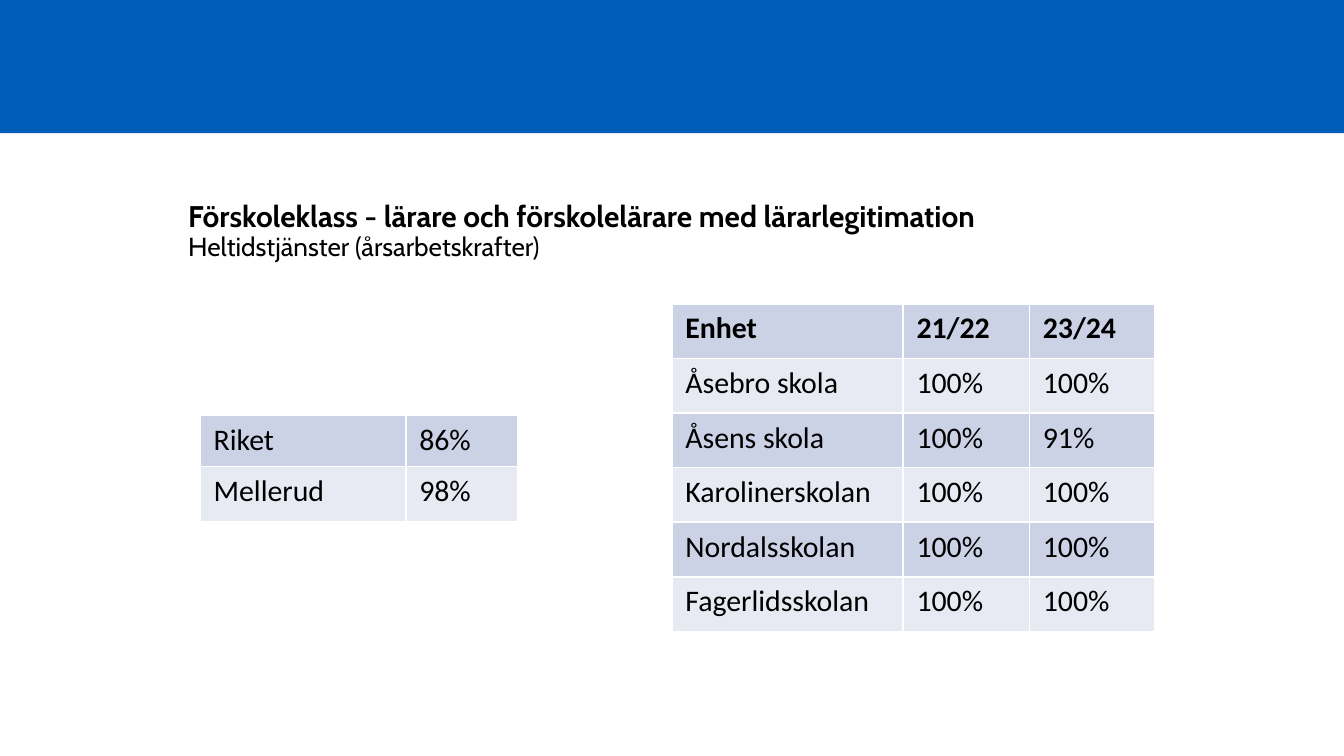
"""Build a slide on certified preschool-class teachers with two share tables."""
from lxml.etree import SubElement
from pptx import Presentation
from pptx.dml.color import RGBColor
from pptx.enum.shapes import MSO_SHAPE
from pptx.enum.text import MSO_ANCHOR, MSO_AUTO_SIZE, PP_ALIGN
from pptx.oxml.ns import qn
from pptx.util import Inches, Pt

TITLE = [
    ("Förskoleklass - lärare och förskolelärare med lärarlegitimation", 16, True),
    ("Heltidstjänster (årsarbetskrafter)", 14, False),
]
TABLES = [
    {
        "rows": [("Riket", "86%"), ("Mellerud", "98%")],
        "position": (1.49, 3.09),
        "widths": [1.53, 0.83],
        "heights": [0.38, 0.41],
        "header": False,
    },
    {
        "rows": [
            ("Enhet", "21/22", "23/24"),
            ("Åsebro skola", "100%", "100%"),
            ("Åsens skola", "100%", "91%"),
            ("Karolinerskolan", "100%", "100%"),
            ("Nordalsskolan", "100%", "100%"),
            ("Fagerlidsskolan", "100%", "100%"),
        ],
        "position": (5, 2.26),
        "widths": [1.72, 0.94, 0.93],
        "heights": [2.44 / 6] * 6,
        "header": True,
    },
]
BAND_FILLS = ("CCD2E6", "E7EAF3")


def set_fill(item, color):
    item.fill.solid()
    item.fill.fore_color.rgb = RGBColor.from_string(color)


def add_text(paragraph, text, size=16, font="Calibri", color="000000", bold=False):
    run = paragraph.add_run()
    run.text = text
    run.font.size = Pt(size)
    run.font.name = font
    run.font.bold = bold
    run.font.color.rgb = RGBColor.from_string(color)


def set_borders(cell, color="FFFFFF", width=1):
    properties = cell._tc.get_or_add_tcPr()
    for index, side in enumerate(("lnL", "lnR", "lnT", "lnB")):
        line = SubElement(properties, qn(f"a:{side}"), w=str(Pt(width)))
        properties.insert(index, line)
        fill = SubElement(line, qn("a:solidFill"))
        SubElement(fill, qn("a:srgbClr"), val=color)


def add_share_table(slide, rows, position, widths, heights, header):
    size = (sum(widths), sum(heights))
    frame = slide.shapes.add_table(
        len(rows), len(widths), *map(Inches, position + size))
    table = frame.table
    table.first_row = header
    table.horz_banding = False
    for column, width in zip(table.columns, widths):
        column.width = Inches(width)
    for row_index, (row, height) in enumerate(zip(table.rows, heights)):
        row.height = Inches(height)
        for cell, text in zip(row.cells, rows[row_index]):
            set_fill(cell, BAND_FILLS[row_index % 2])
            set_borders(cell)
            add_text(cell.text_frame.paragraphs[0], text,
                     bold=header and row_index == 0)


def add_title(slide):
    title = slide.shapes.title
    title.left, title.top, title.width, title.height = map(
        Inches, (1.3, 1.46, 8.9, 0.8))
    frame = title.text_frame
    frame.auto_size = MSO_AUTO_SIZE.NONE
    frame.word_wrap = True
    frame.vertical_anchor = MSO_ANCHOR.BOTTOM
    frame.margin_bottom = Inches(0.31)
    paragraph = frame.paragraphs[0]
    paragraph.alignment = PP_ALIGN.LEFT
    paragraph.line_spacing = 0.9
    for index, (text, size, bold) in enumerate(TITLE):
        if index:
            paragraph.add_line_break()
        add_text(paragraph, text, size=size, font="Cabin", bold=bold)


def main():
    presentation = Presentation()
    presentation.slide_width = Inches(10)
    presentation.slide_height = presentation.slide_width * 9 // 16
    slide = presentation.slides.add_slide(presentation.slide_layouts[5])

    banner = slide.shapes.add_shape(
        MSO_SHAPE.RECTANGLE, 0, 0, presentation.slide_width, Inches(0.99))
    banner.shadow.inherit = False
    set_fill(banner, "005EB8")
    banner.line.fill.background()

    add_title(slide)
    for table in TABLES:
        add_share_table(slide, **table)
    presentation.save("out.pptx")


if __name__ == "__main__":
    main()
